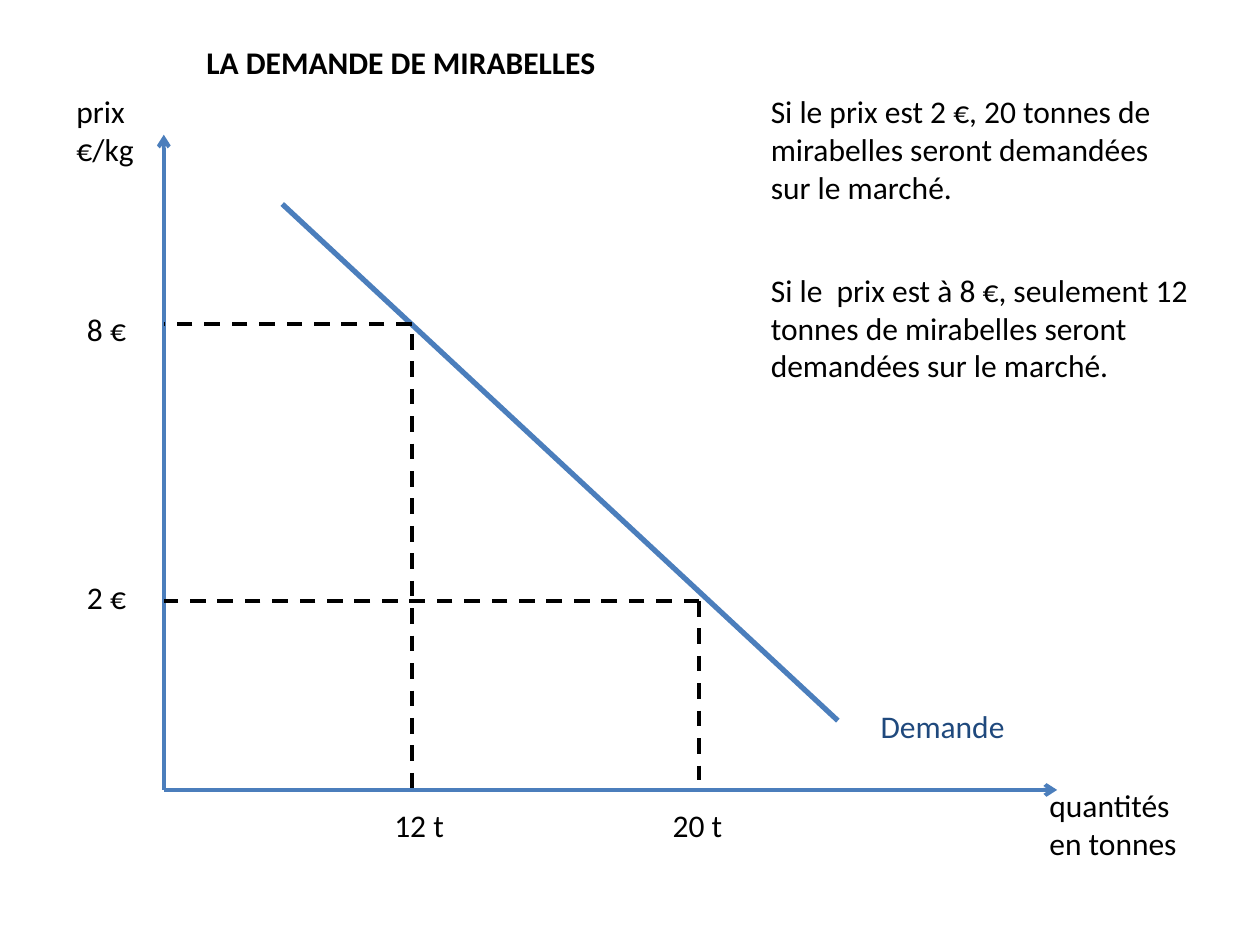
from dataclasses import dataclass

from lxml.etree import SubElement
from pptx import Presentation
from pptx.dml.color import RGBColor
from pptx.enum.dml import MSO_LINE
from pptx.enum.shapes import MSO_CONNECTOR
from pptx.enum.text import MSO_AUTO_SIZE
from pptx.oxml.ns import qn
from pptx.util import Pt


@dataclass(frozen=True)
class Theme:
    font: str = "Calibri"
    text_size: float = 18
    ink: RGBColor = RGBColor(0x00, 0x00, 0x00)
    curve: RGBColor = RGBColor(0x4B, 0x7E, 0xBC)
    curve_label: RGBColor = RGBColor(0x1F, 0x49, 0x7D)
    line_width: float = 2.25
    curve_width: float = 3


@dataclass(frozen=True)
class Box:
    left: float
    top: float
    width: float
    height: float

    def inside(self, left, top, width, height):
        """Return a box whose position is measured from this one."""
        return Box(self.left + left, self.top + top, width, height)


THEME = Theme()


def add_text(page, box, text, color=THEME.ink, bold=False):
    shape = page.shapes.add_textbox(
        Pt(box.left), Pt(box.top), Pt(box.width), Pt(box.height))
    frame = shape.text_frame
    frame.word_wrap = True
    frame.auto_size = MSO_AUTO_SIZE.SHAPE_TO_FIT_TEXT
    frame.text = text
    for para in frame.paragraphs:
        for span in para.runs:
            span.font.name = THEME.font
            span.font.size = Pt(THEME.text_size)
            span.font.bold = bold
            span.font.color.rgb = color


def add_line(page, box, start, end, color, width=THEME.line_width,
             dashed=False, arrow=False):
    """Draw a line between two points measured from the box's corner."""
    connector = page.shapes.add_connector(
        MSO_CONNECTOR.STRAIGHT,
        Pt(box.left + start[0]), Pt(box.top + start[1]),
        Pt(box.left + end[0]), Pt(box.top + end[1]))
    line = connector.line
    line.color.rgb = color
    line.width = Pt(width)
    if dashed:
        line.dash_style = MSO_LINE.DASH
    properties = connector.element.spPr
    if arrow:
        SubElement(properties.find(qn("a:ln")), qn("a:tailEnd"), type="arrow")
    SubElement(properties, qn("a:effectLst"))


def add_axes(page, box):
    origin = (0, box.height)
    for end in ((0, 0), (box.width, box.height)):
        add_line(page, box, origin, end, THEME.curve, arrow=True)
    add_text(page, box.inside(-57, -28, 73.5, 51), "prix\n€/kg")
    add_text(page, box.inside(499, box.height - 5.8, 90.7, 51),
             "quantités\nen tonnes")


def add_demand_curve(page, box):
    add_line(page, box, (67.7, 39.6), (385.2, 334.8), THEME.curve,
             width=THEME.curve_width)
    add_text(page, box.inside(402.5, 323.3, 108, 29), "Demande",
             THEME.curve_label)


def add_price_point(page, box, point, drop, price, quantity):
    """Project a point of the curve on both axes and label it there."""
    x, y = point
    drop_start, drop_end = drop
    price_top, (quantity_left, quantity_width) = price[1], quantity[1]
    add_line(page, box, point, (0, y), THEME.ink, dashed=True)
    add_line(page, box, (x, drop_start), (x, drop_end), THEME.ink, dashed=True)
    add_text(page, box.inside(-51, price_top, 39.6, 29), price[0])
    add_text(page, box.inside(quantity_left, box.height + 5.8,
                              quantity_width, 29), quantity[0])


def add_demand_graph(page, box):
    add_axes(page, box)
    add_demand_curve(page, box)
    add_price_point(page, box, (141.8, 108), (113.8, 376.6),
                    ("8 €", 96.5), ("12 t", (124.6, 51)))
    add_price_point(page, box, (306, 266.4), (266.4, 368.6),
                    ("2 €", 249.8), ("20 t", (283.7, 45.4)))


def add_comments(page, box):
    add_text(page, box.inside(0, 0, 249, 72.7),
             "Si le prix est 2 €, 20 tonnes de mirabelles seront demandées "
             "sur le marché.")
    add_text(page, box.inside(0, 102.2, box.width, 72.7),
             "Si le  prix est à 8 €, seulement 12 tonnes de mirabelles seront "
             "demandées sur le marché.")


def main():
    deck = Presentation()
    deck.slide_width, deck.slide_height = Pt(720), Pt(540)
    page = deck.slides.add_slide(deck.slide_layouts[6])

    # Graph with its axes, curve and projections
    add_demand_graph(page, Box(93.6, 77, 510.5, 374.4))
    # Title
    add_text(page, Box(110.9, 20.9, 255, 29), "LA DEMANDE DE MIRABELLES",
             bold=True)
    # Reading of the two points
    add_comments(page, Box(433.4, 49, 260.6, 174.9))

    deck.save("out.pptx")


if __name__ == "__main__":
    main()
